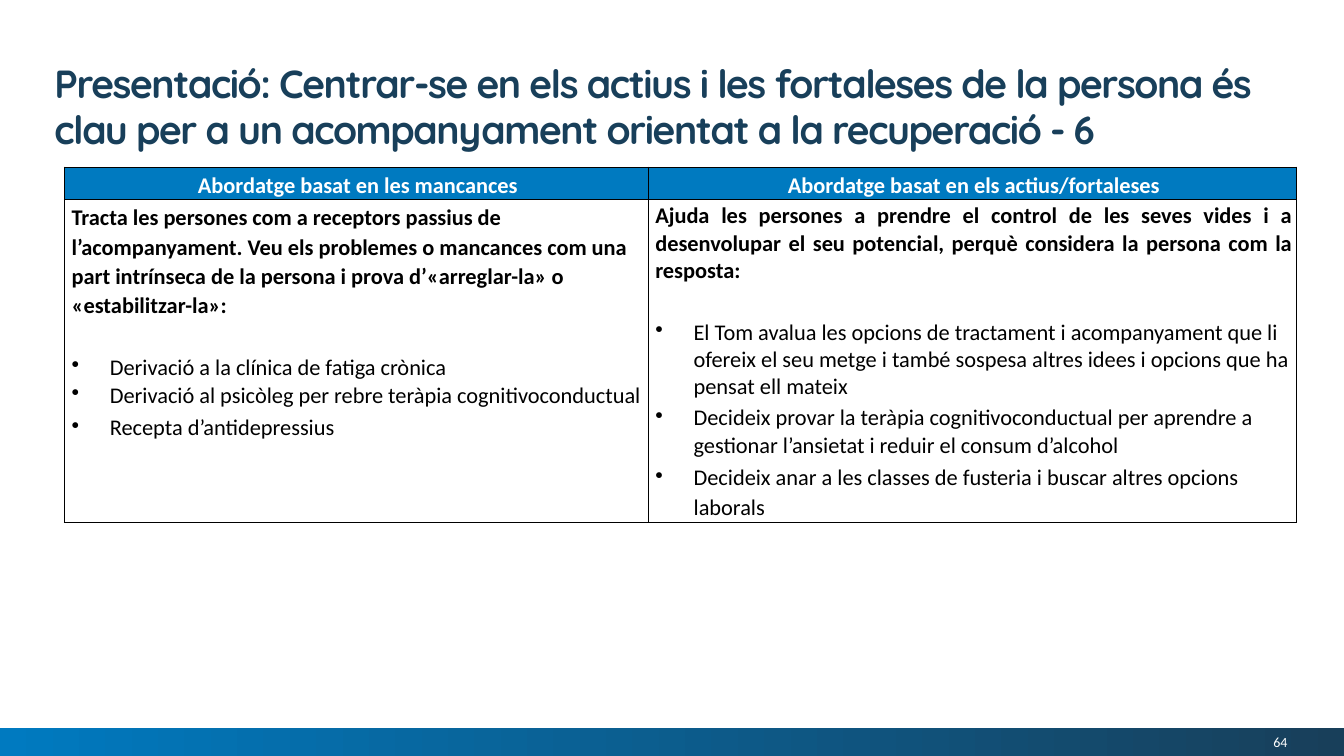
from lxml.etree import SubElement
from pptx import Presentation
from pptx.dml.color import RGBColor
from pptx.enum.shapes import MSO_SHAPE
from pptx.enum.text import MSO_ANCHOR, PP_ALIGN
from pptx.oxml.ns import qn
from pptx.util import Inches, Pt

COLORS = {"blue": "007AC0", "navy": "183F5A", "white": "FFFFFF", "black": "000000"}

HEADERS = ["Abordatge basat en les mancances", "Abordatge basat en els actius/fortaleses"]

DEFICITS = [
    ("Tracta les persones com a receptors passius de l’acompanyament. Veu els problemes o mancances "
     "com una part intrínseca de la persona i prova d’«arreglar-la» o «estabilitzar-la»:", 1.07, 23),
    ("Derivació a la clínica de fatiga crònica", 1.07, 0),
    ("Derivació al psicòleg per rebre teràpia cognitivoconductual", 1.03, 2.2),
    ("Recepta d’antidepressius", 1.07, 0),
]
STRENGTHS = [
    ("Ajuda les persones a prendre el control de les seves vides i a desenvolupar el seu potencial, "
     "perquè considera la persona com la resposta:", 0.99, 25),
    ("El Tom avalua les opcions de tractament i acompanyament que li ofereix el seu metge i també "
     "sospesa altres idees i opcions que ha pensat ell mateix", 0.99, 2.3),
    ("Decideix provar la teràpia cognitivoconductual per aprendre a gestionar l’ansietat i reduir "
     "el consum d’alcohol", 1.03, 2.1),
    ("Decideix anar a les classes de fusteria i buscar altres opcions laborals", 1.07, 0),
]


def rgb(name):
    return RGBColor.from_string(COLORS[name])


def add_run(p, text, size, color, bold=False, font="Calibri"):
    r = p.add_run()
    r.text = text
    r.font.size = Pt(size)
    r.font.name = font
    r.font.bold = bold
    r.font.color.rgb = rgb(color)
    return r


def add_text_box(s, left, top, width, height):
    tf = s.shapes.add_textbox(Inches(left), Inches(top), Inches(width), Inches(height)).text_frame
    tf.word_wrap = True
    return tf


def add_title(s, text):
    p = add_text_box(s, 0.44, 0.55, 12.32, 0.54).paragraphs[0]
    p.line_spacing = Pt(33)
    r = add_run(p, text, 28, "navy", True, "Quicksand")
    r.font._element.set("spc", "-100")


def add_footer(s, number):
    bar = s.shapes.add_shape(MSO_SHAPE.RECTANGLE, 0, Inches(7.22), Inches(13.33), Inches(0.28))
    bar.shadow.inherit = False
    bar.line.fill.background()
    bar.fill.gradient()
    bar.fill.gradient_angle = 0
    for stop, color, position in zip(bar.fill.gradient_stops, ("blue", "navy"), (0, 1)):
        stop.color.rgb = rgb(color)
        stop.position = position
    tf = add_text_box(s, 10.97, 7.24, 1.8, 0.24)
    tf.margin_left = tf.margin_right = tf.margin_top = tf.margin_bottom = 0
    tf.vertical_anchor = MSO_ANCHOR.MIDDLE
    p = tf.paragraphs[0]
    p.alignment = PP_ALIGN.RIGHT
    add_run(p, number, 10, "white")


def add_solid(parent, color):
    SubElement(SubElement(parent, qn("a:solidFill")), qn("a:srgbClr"), val=COLORS[color])


def add_bullet(p):
    pPr = p._p.get_or_add_pPr()
    pPr.set("marL", str(Inches(0.38)))
    pPr.set("indent", str(-Inches(0.38)))
    color = SubElement(pPr, qn("a:buClr"))
    SubElement(color, qn("a:srgbClr"), val=COLORS["black"])
    SubElement(pPr, qn("a:buChar"), char="•")


def format_cell(cell, fill=None):
    cell.margin_left, cell.margin_top = Inches(0.07), Inches(0.03)
    cell.margin_right, cell.margin_bottom = Inches(0.04), 0
    tcPr = cell._tc.get_or_add_tcPr()
    for side in ("lnL", "lnR", "lnT", "lnB"):
        add_solid(SubElement(tcPr, qn(f"a:{side}"), w=str(Pt(1))), "black")
    if fill:
        cell.fill.solid()
        cell.fill.fore_color.rgb = rgb(fill)
    else:
        cell.fill.background()


def fill_header(cell, text):
    format_cell(cell, "blue")
    p = cell.text_frame.paragraphs[0]
    p.alignment = PP_ALIGN.CENTER
    p.line_spacing = 1.07
    add_run(p, text, 16, "white", True)


def fill_body(cell, items, lead_align):
    format_cell(cell)
    tf = cell.text_frame
    for i, (text, spacing, after) in enumerate(items):
        p = tf.add_paragraph() if i else tf.paragraphs[0]
        p.line_spacing = spacing
        p.space_after = Pt(after)
        if i:
            add_bullet(p)
        else:
            p.alignment = lead_align
        add_run(p, text, 16, "black", i == 0)


def add_comparison(s):
    table = s.shapes.add_table(2, 2, Inches(0.64), Inches(1.66), Inches(12.22), Inches(3.52)).table
    for column, width in zip(table.columns, (5.79, 6.43)):
        column.width = Inches(width)
    for row, height in zip(table.rows, (0.32, 3.2)):
        row.height = Inches(height)
    bodies = [(DEFICITS, PP_ALIGN.LEFT), (STRENGTHS, PP_ALIGN.JUSTIFY)]
    for col, (header, (items, align)) in enumerate(zip(HEADERS, bodies)):
        fill_header(table.cell(0, col), header)
        fill_body(table.cell(1, col), items, align)


def main():
    prs = Presentation()
    prs.slide_width, prs.slide_height = Inches(13.33), Inches(7.5)
    s = prs.slides.add_slide(prs.slide_layouts[6])
    add_footer(s, "64")
    add_comparison(s)
    add_title(s, "Presentació: Centrar-se en els actius i les fortaleses de la persona és "
                 "clau per a un acompanyament orientat a la recuperació - 6")
    prs.save("out.pptx")


if __name__ == "__main__":
    main()
